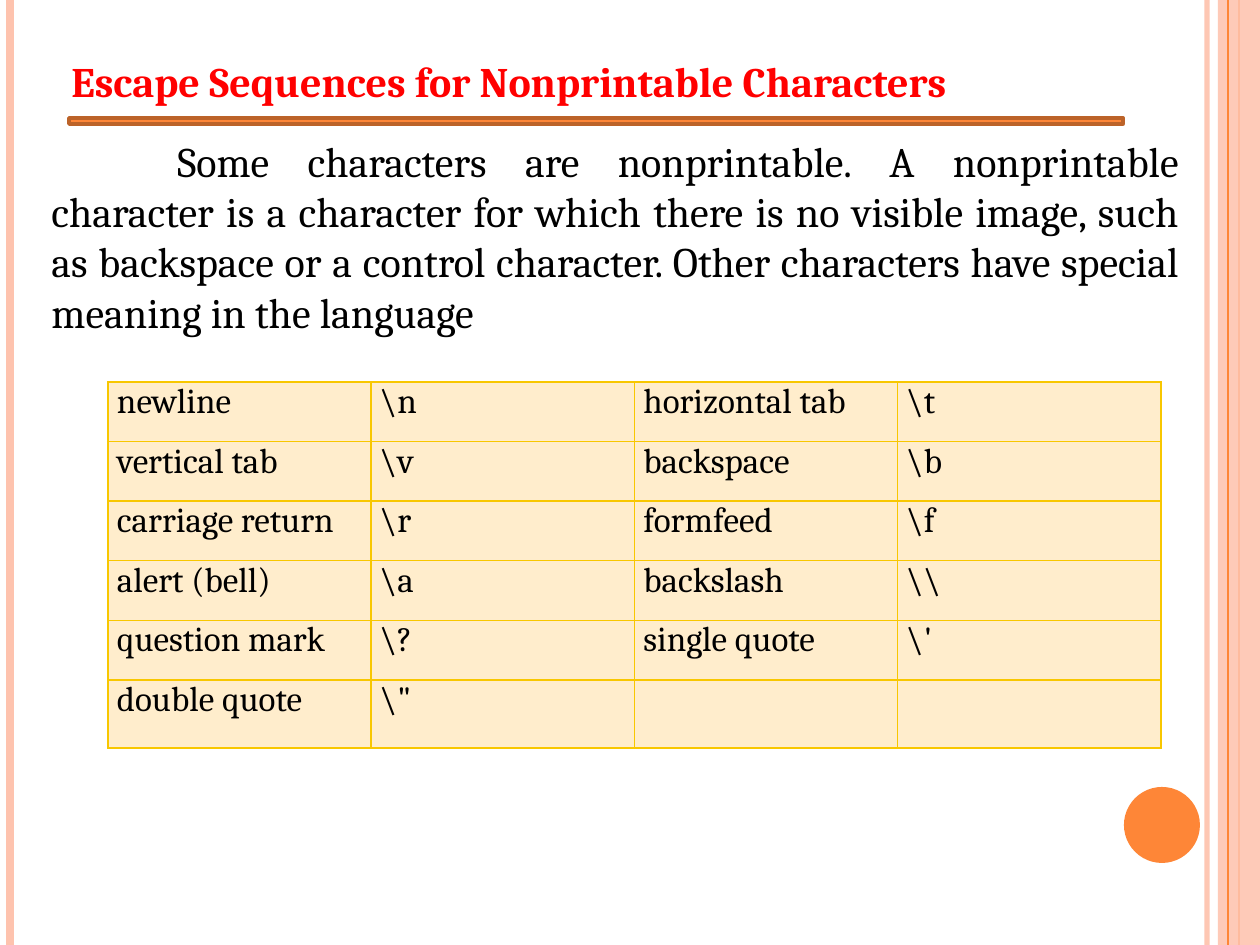
from lxml import etree
from pptx import Presentation
from pptx.dml.color import RGBColor
from pptx.enum.shapes import MSO_CONNECTOR, MSO_SHAPE
from pptx.enum.text import PP_ALIGN
from pptx.oxml import parse_xml
from pptx.oxml.ns import nsdecls, qn
from pptx.util import Emu, Pt

STRAIGHT = MSO_CONNECTOR.STRAIGHT
RECTANGLE = MSO_SHAPE.RECTANGLE
OVAL = MSO_SHAPE.OVAL
LEFT = PP_ALIGN.LEFT
JUSTIFY = PP_ALIGN.JUSTIFY

COLORS = {
    "peach": "FEC3AE",
    "orange": "FE8637",
    "brown": "BC6329",
    "red": "FF0000",
    "black": "000000",
    "gold": "F8C700",
    "cream": "FFEDCC",
}
FONT = "Cambria"


def px(length):
    return Emu(round(length * 914400 / 126))


def write(frame, text, size=24, color="black", bold=False, align=LEFT, indent=0):
    frame.word_wrap = True
    para = frame.paragraphs[0]
    para.alignment = align
    if indent:
        properties = para._p.get_or_add_pPr()
        properties.set("marL", "0")
        properties.set("indent", str(px(indent)))
    span = para.add_run()
    span.text = text
    span.font.name = FONT
    span.font.size = Pt(size)
    span.font.bold = bold
    span.font.color.rgb = RGBColor.from_string(COLORS[color])


deck = Presentation()
deck.slide_width = px(1260)
deck.slide_height = px(945)
page = deck.slides.add_slide(deck.slide_layouts[6])

rails = [
    (1207, "peach", 3, 93),
    (10, "peach", 4.5, 100),
    (1239, "orange", 1.5, 100),
    (1228, "orange", 0.75, 100),
]
shapes = [
    (RECTANGLE, (1218, 0, 42, 945), "peach", 87, None),
    (OVAL, (1124, 787, 76, 76), "orange", 100, None),
    (RECTANGLE, (69, 118, 1054, 6), "orange", 100, "brown"),
]
translucent = []

for x, color, width, opacity in rails[:3]:
    rail = page.shapes.add_connector(STRAIGHT, px(x), 0, px(x), px(945))
    rail.line.color.rgb = RGBColor.from_string(COLORS[color])
    rail.line.width = Pt(width)
    etree.SubElement(rail._element.spPr, qn("a:effectLst"))
    translucent.append((rail, opacity))

for kind, place, color, opacity, outline in shapes:
    shape = page.shapes.add_shape(kind, *map(px, place))
    shape.shadow.inherit = False
    shape.fill.solid()
    shape.fill.fore_color.rgb = RGBColor.from_string(COLORS[color])
    if outline:
        shape.line.color.rgb = RGBColor.from_string(COLORS[outline])
        shape.line.width = Pt(2)
    else:
        shape.line.fill.background()
    translucent.append((shape, opacity))

for x, color, width, opacity in rails[3:]:
    rail = page.shapes.add_connector(STRAIGHT, px(x), 0, px(x), px(945))
    rail.line.color.rgb = RGBColor.from_string(COLORS[color])
    rail.line.width = Pt(width)
    etree.SubElement(rail._element.spPr, qn("a:effectLst"))

for item, opacity in translucent:
    if opacity < 100:
        tint = next(item._element.spPr.iter(qn("a:srgbClr")))
        etree.SubElement(tint, qn("a:alpha"), val=str(opacity * 1000))

body_box = page.shapes.add_textbox(px(39), px(129), px(1152), px(217))
write(
    body_box.text_frame,
    "Some characters are nonprintable. A nonprintable character is a character "
    "for which there is no visible image, such as backspace or a control character. "
    "Other characters have special meaning in the language",
    align=JUSTIFY,
    indent=126,
)
title_box = page.shapes.add_textbox(px(59), px(49), px(1131), px(63))
write(
    title_box.text_frame,
    "Escape Sequences for Nonprintable Characters",
    color="red",
    bold=True,
)

escapes = [
    ("newline", r"\n", "horizontal tab", r"\t"),
    ("vertical tab", r"\v", "backspace", r"\b"),
    ("carriage return", r"\r", "formfeed", r"\f"),
    ("alert (bell)", r"\a", "backslash", r"\\"),
    ("question mark", r"\?", "single quote", r"\'"),
    ("double quote", r"\"", "", ""),
]
table = page.shapes.add_table(6, 4, px(108), px(382), px(1053), px(366)).table
table.first_row = False
table.horz_banding = False
for column in table.columns:
    column.width = px(1053) // 4
for row in table.rows:
    row.height = px(298) // 5
table.rows[5].height = px(68)

for row, texts in zip(table.rows, escapes):
    for cell, text in zip(row.cells, texts):
        cell.margin_left = cell.margin_right = px(9)
        cell.margin_top = cell.margin_bottom = 0
        for side in ("lnL", "lnR", "lnT", "lnB"):
            cell._tc.get_or_add_tcPr().append(parse_xml(
                f'<a:{side} {nsdecls("a")} w="{Pt(1)}"><a:solidFill>'
                f'<a:srgbClr val="{COLORS["gold"]}"/></a:solidFill></a:{side}>'
            ))
        cell.fill.solid()
        cell.fill.fore_color.rgb = RGBColor.from_string(COLORS["cream"])
        if text:
            write(cell.text_frame, text, size=20)

deck.save("out.pptx")
